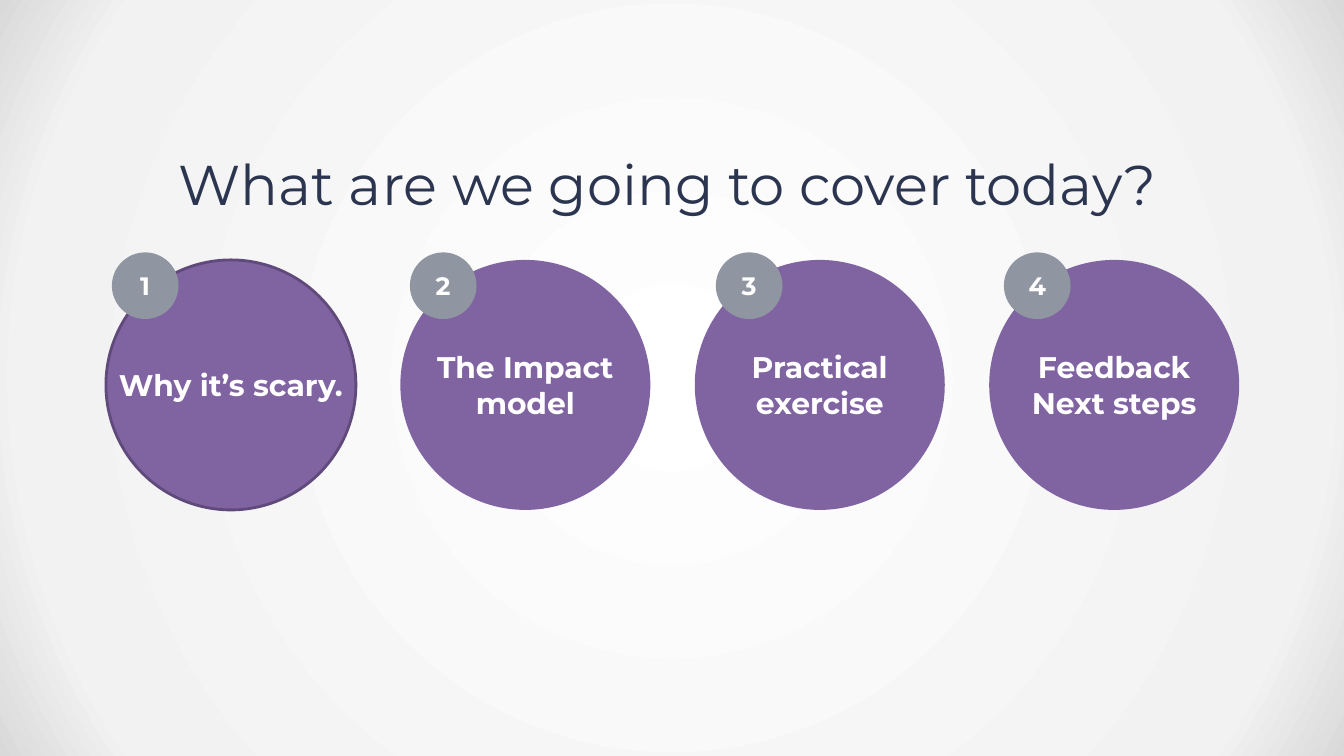
import pptx
import pptx.util
import pptx.dml.color
import pptx.enum.shapes
import pptx.enum.text
import pptx.oxml
import pptx.oxml.ns

Cm = pptx.util.Cm
Pt = pptx.util.Pt
Shapes = pptx.enum.shapes.MSO_SHAPE


def colour(hex_code):
    return pptx.dml.color.RGBColor.from_string(hex_code)


def write(frame, text, size, color="FFFFFF", bold=False, wrap=True, insets=(0, 0, 0, 0), font="Montserrat"):
    """Fill a frame with centred text, one paragraph per line."""
    frame.auto_size = pptx.enum.text.MSO_AUTO_SIZE.NONE
    frame.word_wrap = wrap
    frame.vertical_anchor = pptx.enum.text.MSO_ANCHOR.MIDDLE
    (frame.margin_left, frame.margin_top,
     frame.margin_right, frame.margin_bottom) = [Cm(inset) for inset in insets]
    frame.text = text
    for line in frame.paragraphs:
        line.alignment = pptx.enum.text.PP_ALIGN.CENTER
        for run in line.runs:
            run.font.name = font
            run.font.size = Pt(size)
            run.font.bold = bold
            run.font.color.rgb = colour(color)


class AgendaSlide:
    WIDTH, HEIGHT = 33.87, 19.05
    NAVY, PURPLE, DARK_PURPLE, GREY = "2B354F", "8064A2", "604A7B", "9095A2"

    def __init__(self, deck):
        deck.slide_width, deck.slide_height = Cm(self.WIDTH), Cm(self.HEIGHT)
        self.slide = deck.slides.add_slide(deck.slide_layouts[5])

    def shape(self, kind, left, top, width, height):
        item = self.slide.shapes.add_shape(kind, Cm(left), Cm(top), Cm(width), Cm(height))
        item.shadow.inherit = False
        item.line.fill.background()
        return item

    def backdrop(self, stops):
        """Radial gradient over the whole slide, behind the title."""
        panel = self.shape(Shapes.RECTANGLE, 0, 0, self.WIDTH, self.HEIGHT)
        panel.fill.gradient()
        stop_xml = "".join(
            f'<a:gs pos="{percent * 1000}"><a:srgbClr val="{shade}"/></a:gs>'
            for percent, shade in stops)
        radial = pptx.oxml.parse_xml(
            f'<a:gradFill {pptx.oxml.ns.nsdecls("a")} rotWithShape="1"><a:gsLst>{stop_xml}</a:gsLst>'
            '<a:path path="circle"><a:fillToRect l="50000" t="50000" r="50000" b="50000"/></a:path>'
            '</a:gradFill>')
        linear = panel._element.spPr.find(pptx.oxml.ns.qn("a:gradFill"))
        linear.getparent().replace(linear, radial)
        self.slide.shapes.title._element.addprevious(panel._element)

    def title(self, text):
        heading = self.slide.shapes.title
        heading.left, heading.top = Cm(0), Cm(3.56)
        heading.width, heading.height = Cm(self.WIDTH), Cm(2.11)
        write(heading.text_frame, text, 40, color=self.NAVY, insets=(0, 0.1, 0.23, 0.1))

    def circle(self, left, top, size, fill, text, text_size, wrap=True, outline=None):
        disc = self.shape(Shapes.OVAL, left, top, size, size)
        disc.fill.solid()
        disc.fill.fore_color.rgb = colour(fill)
        if outline:
            disc.line.color.rgb = colour(outline)
            disc.line.width = Pt(2)
        write(disc.text_frame, text, text_size, bold=True, wrap=wrap)


def main():
    deck = pptx.Presentation()
    agenda = AgendaSlide(deck)

    # Background and heading
    agenda.backdrop([(0, "FFFFFF"), (85, "F2F2F2"), (100, "D9D9D9")])
    agenda.title("What are we going to cover today?")

    # Topics, evenly spaced; the first one is outlined
    topics = ["Why it’s scary.", "The Impact\nmodel", "Practical\nexercise", "Feedback\nNext steps"]
    for index, topic in enumerate(topics):
        agenda.circle(2.67 + 7.42 * index, 6.55, 6.3, agenda.PURPLE, topic, 21.3, wrap=False,
                      outline=agenda.DARK_PURPLE if index == 0 else None)

    # Number badges
    for number, badge_left in enumerate([2.82, 10.33, 18.04, 25.3], start=1):
        agenda.circle(badge_left, 6.36, 1.68, agenda.GREY, str(number), 18)

    deck.save("out.pptx")


if __name__ == "__main__":
    main()
